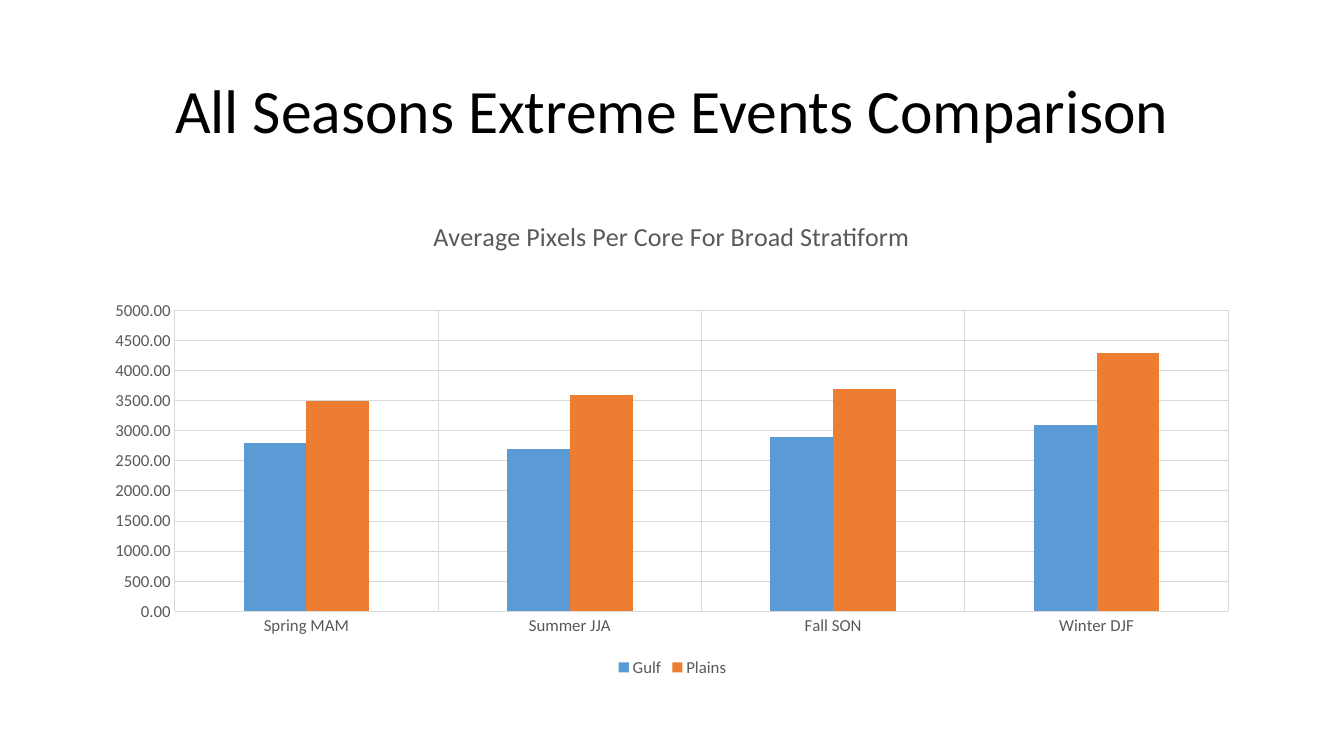
from lxml import etree
from pptx import Presentation
from pptx.chart.data import CategoryChartData as ChartData
from pptx.dml.color import RGBColor
from pptx.enum.chart import XL_CHART_TYPE as Kind, XL_LEGEND_POSITION as Spot
from pptx.enum.chart import XL_TICK_MARK as Tick
from pptx.enum.text import MSO_ANCHOR as Anchor, PP_ALIGN as Align
from pptx.oxml.ns import qn
from pptx.util import Inches, Pt

BLACK = RGBColor(0x00, 0x00, 0x00)
GRAY = RGBColor(0x59, 0x59, 0x59)
PALE = RGBColor(0xD9, 0xD9, 0xD9)
BLUE = RGBColor(0x5B, 0x9B, 0xD5)
ORANGE = RGBColor(0xED, 0x7D, 0x31)

WIDE, HIGH = Inches(13.33), Inches(7.5)
LEFT, SPAN = 0.92 / 13.33, 11.5 / 13.33
COLS, ROWS = 1160, 480  # grid inside the chart

SEASONS = ["Spring MAM", "Summer JJA", "Fall SON", "Winter DJF"]
REGIONS = [
    ("Gulf", [2800, 2700, 2900, 3100], BLUE),
    ("Plains", [3500, 3600, 3700, 4300], ORANGE),
]


def assign(item, **values):
    for name, value in values.items():
        setattr(item, name, value)


def style(font, size, color):
    assign(font, name="Calibri", size=Pt(size), bold=False)
    font.color.rgb = color


def area(top, tall):
    """Turn shares of the slide into left, top, width and height."""
    return [round(n) for n in (LEFT * WIDE, top * HIGH, SPAN * WIDE, tall * HIGH)]


def rule(line):
    line.width = Pt(0.75)
    line.color.rgb = PALE


def place(node, index, inner=False, **cells):
    """Fix a chart part at columns and rows of the chart's grid."""
    for old in node.findall(qn("c:layout")):
        node.remove(old)
    layout = etree.Element(qn("c:layout"))
    manual = etree.SubElement(layout, qn("c:manualLayout"))
    values = {"layoutTarget": "inner"} if inner else {}
    values.update(xMode="edge", yMode="edge")
    for name, count in cells.items():
        values[name] = count / (COLS if name in "xw" else ROWS)
    for name, value in values.items():
        etree.SubElement(manual, qn("c:" + name)).set("val", str(value))
    node.insert(index, layout)


def add_title(slide, text):
    title = slide.shapes.title
    box = area(0.4 / 7.5, 1.45 / 7.5)
    assign(title, **dict(zip(("left", "top", "width", "height"), box)))
    frame = title.text_frame
    assign(frame, text=text, vertical_anchor=Anchor.MIDDLE, word_wrap=True)
    para = frame.paragraphs[0]
    assign(para, alignment=Align.CENTER, line_spacing=0.9)
    style(para.runs[0].font, 44, BLACK)


def format_axis(axis):
    assign(axis, major_tick_mark=Tick.NONE, minor_tick_mark=Tick.NONE,
           has_major_gridlines=True)
    rule(axis.major_gridlines.format.line)
    style(axis.tick_labels.font, 12, GRAY)


def add_bars(slide):
    data = ChartData()
    data.categories = SEASONS
    for name, values, _ in REGIONS:
        data.add_series(name, values)
    chart = slide.shapes.add_chart(
        Kind.COLUMN_CLUSTERED, *area(2 / 7.5, 4.76 / 7.5), data).chart
    style(chart.font, 10, BLACK)

    plot = chart.plots[0]
    assign(plot, gap_width=219, overlap=0, vary_by_categories=False)
    for series, (_, _, color) in zip(plot.series, REGIONS):
        series.format.fill.solid()
        series.format.fill.fore_color.rgb = color

    for axis in (chart.category_axis, chart.value_axis):
        format_axis(axis)
    rule(chart.category_axis.format.line)
    values = chart.value_axis
    values.format.line.fill.background()
    assign(values, minimum_scale=0, maximum_scale=5000, major_unit=500)
    assign(values.tick_labels, number_format="0.00", number_format_is_linked=False)

    chart.has_legend = True
    assign(chart.legend, position=Spot.BOTTOM, include_in_layout=False)
    style(chart.legend.font, 12, GRAY)
    return chart


def head_chart(chart, text):
    """Add the chart's title and fix the title and plot in place."""
    chart.has_title = True
    frame = chart.chart_title.text_frame
    frame.text = text
    style(frame.paragraphs[0].runs[0].font, 18.6, GRAY)
    root = chart.plots[0]._element.getparent()
    place(root, 0, inner=True, x=82, y=109, w=1054, h=301)
    place(root.getparent().find(qn("c:title")), 1, x=336, y=12)


def main():
    deck = Presentation()
    assign(deck, slide_width=WIDE, slide_height=HIGH)
    slide = deck.slides.add_slide(deck.slide_layouts[5])
    add_title(slide, "All Seasons Extreme Events Comparison")
    chart = add_bars(slide)
    head_chart(chart, "Average Pixels Per Core For Broad Stratiform")
    deck.save("out.pptx")


if __name__ == "__main__":
    main()
